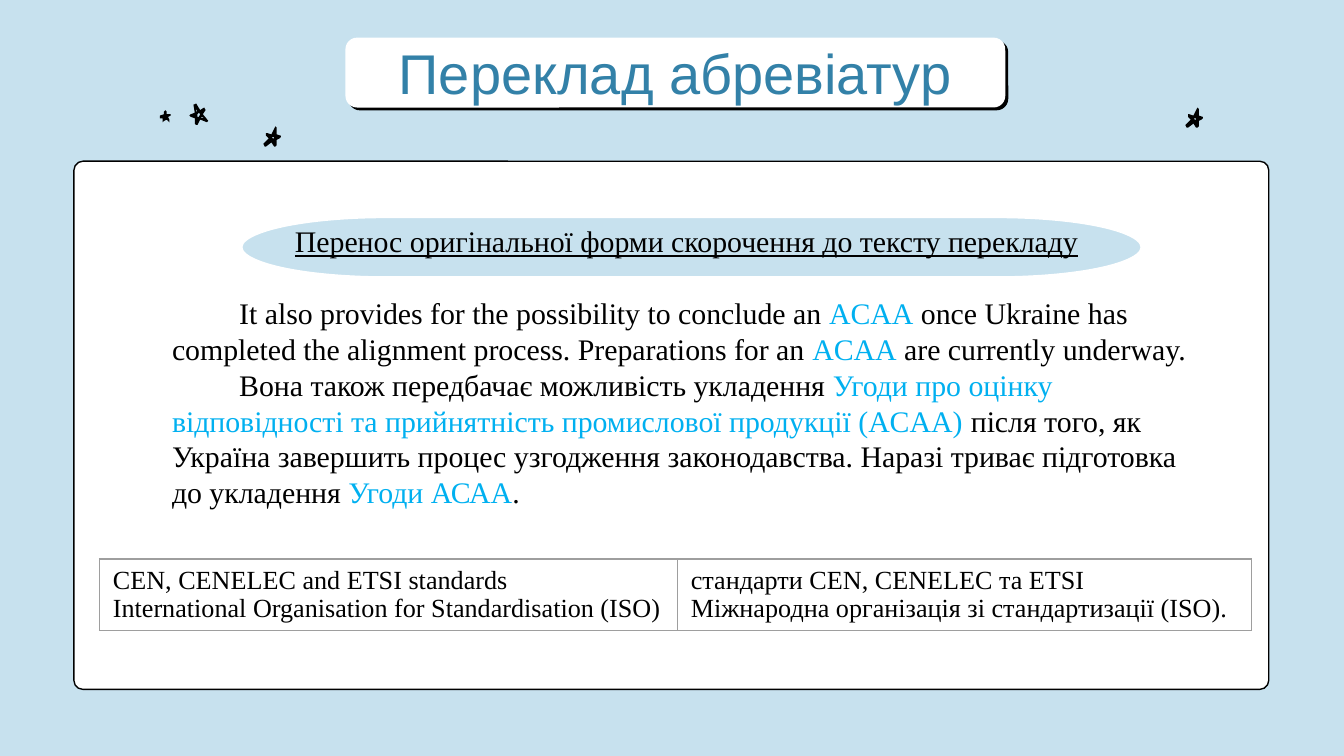
from typing import NamedTuple

from lxml.etree import SubElement
from pptx import Presentation
from pptx.dml.color import RGBColor
from pptx.enum.shapes import MSO_SHAPE as Shape
from pptx.enum.text import MSO_ANCHOR as Anchor, MSO_AUTO_SIZE as AutoSize, PP_ALIGN as Align
from pptx.oxml.ns import qn
from pptx.util import Pt

PX = 9144  # 100 px to the inch
SKY = RGBColor(0xC7, 0xE1, 0xEE)
WHITE = RGBColor(0xFF, 0xFF, 0xFF)
BLACK = RGBColor(0x00, 0x00, 0x00)
TITLE_BLUE = RGBColor(0x33, 0x81, 0xA8)
ACCENT = RGBColor(0x00, 0xB0, 0xF0)
GRID = "9E9E9E"
SANS, SERIF = "Arial", "Times New Roman"


class Box(NamedTuple):
    left: int
    top: int
    width: int
    height: int

    def emu(self) -> list[int]:
        return [v * PX for v in self]


class Span(NamedTuple):
    text: str
    color: RGBColor = BLACK
    underline: bool = False


class Para(NamedTuple):
    spans: list[Span]
    align: Align = Align.LEFT
    indent: int = 50
    before: float = 0


class Star(NamedTuple):
    left: int
    top: int
    contours: list[list[tuple[int, int]]]


OPEN_STAR = [
    [(1, 10), (4, 11), (4, 15), (5, 16), (6, 16), (8, 12), (13, 14), (14, 13), (10, 8),
     (12, 5), (11, 3), (8, 5), (5, 0), (3, 1), (4, 7), (1, 8), (0, 9)],
    [(9, 10), (11, 11), (9, 11)],
    [(8, 8), (7, 10), (6, 10), (6, 8), (7, 7)],
    [(6, 6), (5, 6), (5, 4)],
]
SMALL_STAR = [
    [(5, 0), (4, 1), (4, 3), (1, 4), (1, 6), (2, 6), (3, 6), (3, 8), (3, 9), (4, 8),
     (6, 7), (7, 8), (8, 9), (8, 7), (7, 5), (9, 4), (9, 3), (8, 3), (6, 3), (6, 1)],
]
SLANTED_STAR = [
    [(9, 0), (6, 6), (3, 5), (2, 5), (2, 7), (4, 9), (0, 13), (1, 15), (2, 15), (6, 12),
     (8, 15), (9, 15), (10, 14), (10, 10), (12, 9), (13, 8), (13, 7), (10, 6), (10, 1)],
    [(7, 8), (8, 8), (8, 9), (7, 9), (6, 8)],
]
STARS = [
    Star(141, 77, OPEN_STAR),
    Star(118, 82, SMALL_STAR),
    Star(196, 94, SLANTED_STAR),
    Star(882, 80, SLANTED_STAR),
]
BODY = [
    Para([Span("Перенос оригінальної форми скорочення до тексту перекладу", underline=True)],
         Align.CENTER, indent=0),
    Para([
        Span("It also provides for the possibility to conclude an "),
        Span("ACAA", ACCENT),
        Span(" once Ukraine has completed the alignment process. Preparations for an "),
        Span("ACAA", ACCENT),
        Span(" are currently underway."),
    ], before=19.2),
    Para([
        Span("Вона також передбачає можливість укладення "),
        Span("Угоди про оцінку відповідності та прийнятність промислової продукції (ACAA)",
             ACCENT),
        Span(" після того, як Україна завершить процес узгодження законодавства. "
             "Наразі триває підготовка до укладення "),
        Span("Угоди АСАА", ACCENT),
        Span("."),
    ]),
]
TITLE_BOX = Box(257, 28, 491, 52)
COLUMN_WIDTHS = [430, 427]
CELLS = [
    "CEN, CENELEC and ETSI standards\n"
    "International Organisation for Standardisation (ISO)",
    "стандарти CEN, CENELEC та ETSI\n"
    "Міжнародна організація зі стандартизації (ISO).",
]


def style_font(font, name: str, size: int, color: RGBColor) -> None:
    font.name, font.size, font.color.rgb = name, Pt(size), color


def place(sp, box: Box) -> None:
    """Move a placeholder and bring it to the front."""
    sp.left, sp.top, sp.width, sp.height = box.emu()
    sp.element.getparent().append(sp.element)
    tf = sp.text_frame
    tf.word_wrap, tf.auto_size = True, AutoSize.NONE
    tf.margin_left = tf.margin_right = tf.margin_top = tf.margin_bottom = 10 * PX


def add_panel(s, kind: Shape, box: Box, fill: RGBColor):
    sp = s.shapes.add_shape(kind, *box.emu())
    sp.shadow.inherit = False
    sp.fill.solid()
    sp.fill.fore_color.rgb = fill
    sp.line.fill.background()
    return sp


def outline(sp, color: RGBColor, width: float) -> None:
    sp.line.color.rgb = color
    sp.line.width = Pt(width)


def add_hard_shadow(sp) -> None:
    effects = sp.element.spPr.find(qn("a:effectLst"))
    shadow = SubElement(effects, qn("a:outerShdw"), blurRad="0", dist=str(Pt(2.2)),
                        dir=str(44 * 60000), algn="bl", rotWithShape="0")
    SubElement(shadow, qn("a:srgbClr"), val=str(BLACK))


def fill_title(sp, text: str, box: Box) -> None:
    place(sp, box)
    tf = sp.text_frame
    tf.text = text
    tf.vertical_anchor = Anchor.MIDDLE
    p = tf.paragraphs[0]
    p.alignment = Align.CENTER
    style_font(p.runs[0].font, SANS, 30, TITLE_BLUE)


def fill_body(sp, paras: list[Para], box: Box) -> None:
    place(sp, box)
    tf = sp.text_frame
    tf.vertical_anchor = Anchor.TOP
    for i, para in enumerate(paras):
        p = tf.add_paragraph() if i else tf.paragraphs[0]
        p_pr = p._p.get_or_add_pPr()
        p_pr.set("marL", str(17 * PX))
        p_pr.set("indent", str(para.indent * PX))
        SubElement(p_pr, qn("a:buNone"))
        p.alignment, p.line_spacing = para.align, 1.0
        p.space_before, p.space_after = Pt(para.before), Pt(0)
        for span in para.spans:
            r = p.add_run()
            r.text = span.text
            style_font(r.font, SERIF, 16, span.color)
            r.font.underline = span.underline


def add_star(s, star: Star) -> None:
    first, *holes = star.contours
    builder = s.shapes.build_freeform(*first[0], scale=PX)
    builder.add_line_segments(first[1:], close=True)
    for hole in holes:
        builder.move_to(*hole[0])
        builder.add_line_segments(hole[1:], close=True)
    sp = builder.convert_to_shape(star.left * PX, star.top * PX)
    sp.shadow.inherit = False
    sp.fill.solid()
    sp.fill.fore_color.rgb = BLACK
    sp.line.fill.background()


def add_borders(cell) -> None:
    tc_pr = cell._tc.get_or_add_tcPr()
    for i, side in enumerate("LRTB"):
        ln = SubElement(tc_pr, qn(f"a:ln{side}"), w=str(Pt(0.75)))
        fill = SubElement(ln, qn("a:solidFill"))
        SubElement(fill, qn("a:srgbClr"), val=GRID)
        tc_pr.insert(i, ln)


def add_terms_table(s, box: Box) -> None:
    table = s.shapes.add_table(1, len(CELLS), *box.emu()).table
    table.first_row = table.horz_banding = False
    for i, (width, text) in enumerate(zip(COLUMN_WIDTHS, CELLS)):
        table.columns[i].width = width * PX
        cell = table.cell(0, i)
        cell.text = text
        cell.fill.background()
        add_borders(cell)
        for p in cell.text_frame.paragraphs:
            style_font(p.runs[0].font, SERIF, 14, BLACK)


def main() -> None:
    prs = Presentation()
    prs.slide_width = 1000 * PX
    prs.slide_height = prs.slide_width * 9 // 16
    s = prs.slides.add_slide(prs.slide_layouts[1])
    s.background.fill.solid()
    s.background.fill.fore_color.rgb = SKY

    card = add_panel(s, Shape.ROUNDED_RECTANGLE, Box(55, 120, 889, 393), WHITE)
    card.adjustments[0] = 0.017
    outline(card, BLACK, 0.75)
    outline(add_panel(s, Shape.FLOWCHART_TERMINATOR, Box(179, 161, 671, 46), SKY), WHITE, 2)
    fill_body(s.placeholders[1], BODY, Box(101, 156, 803, 353))
    add_hard_shadow(add_panel(s, Shape.ROUNDED_RECTANGLE, TITLE_BOX, WHITE))
    fill_title(s.shapes.title, "Переклад абревіатур", TITLE_BOX)
    for star in STARS:
        add_star(s, star)
    add_terms_table(s, Box(74, 416, sum(COLUMN_WIDTHS), 53))
    prs.save("out.pptx")


if __name__ == "__main__":
    main()
